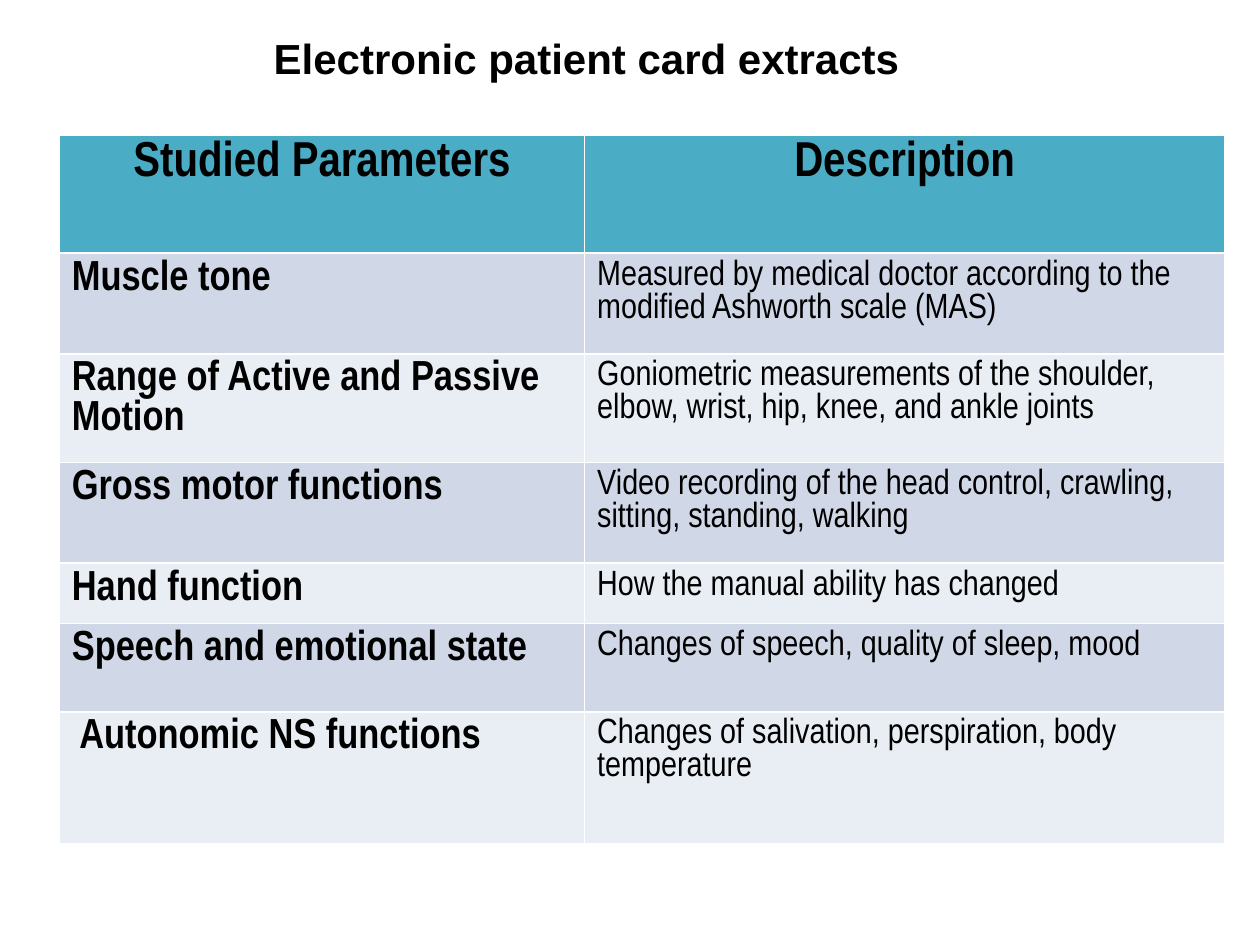
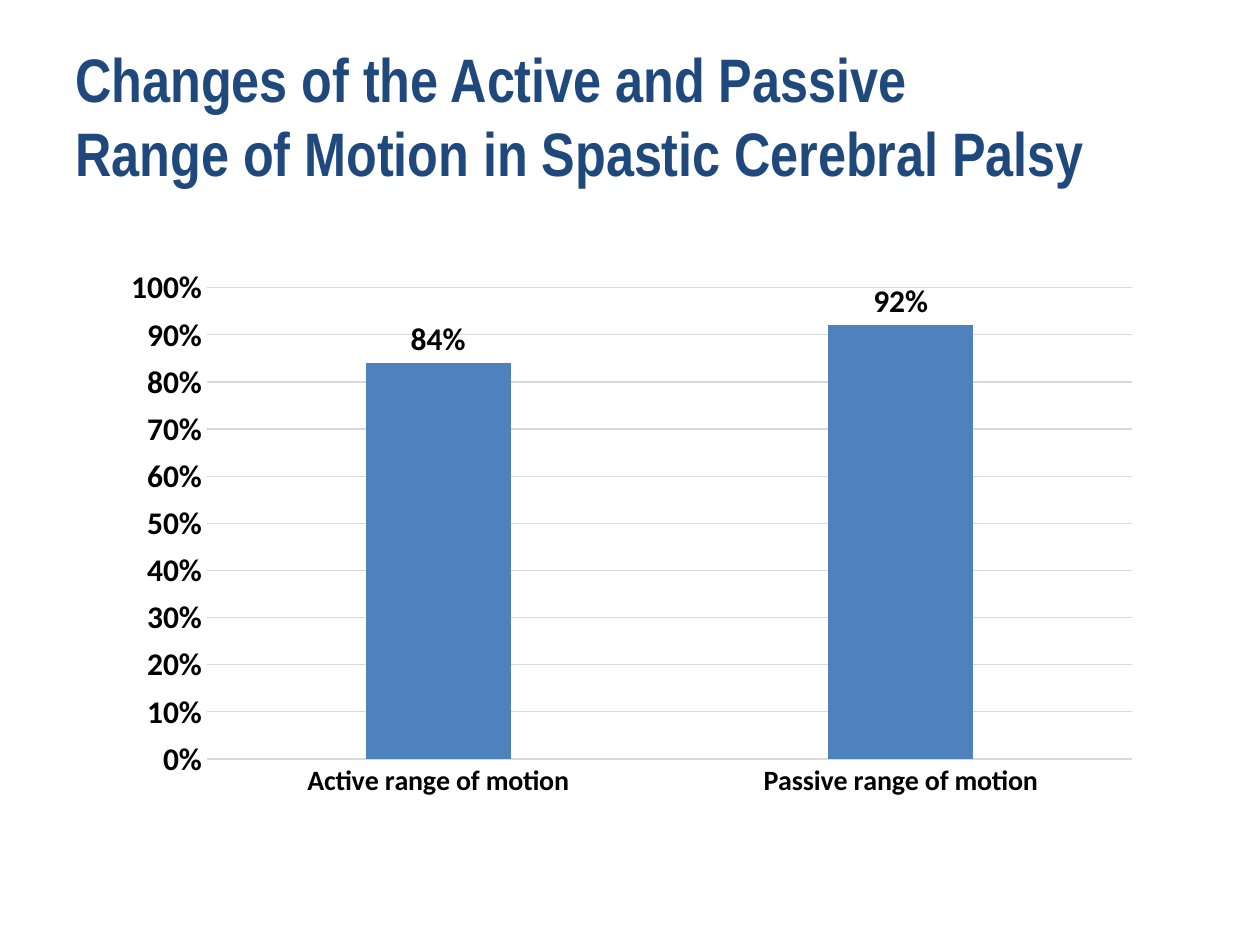
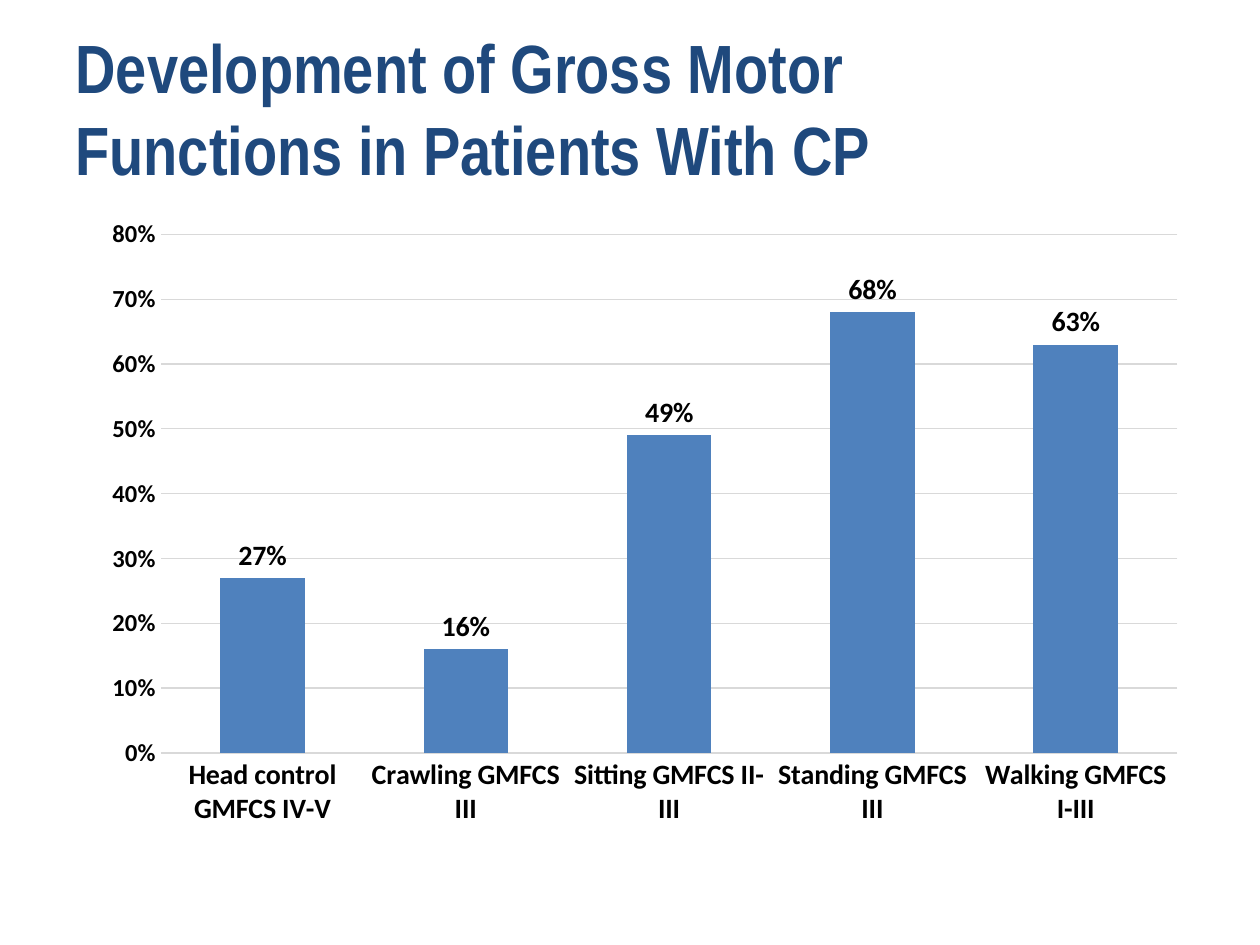
from lxml import etree
from pptx import Presentation
from pptx.chart.data import CategoryChartData
from pptx.dml.color import RGBColor
from pptx.enum.chart import XL_CHART_TYPE, XL_LABEL_POSITION, XL_TICK_MARK
from pptx.enum.text import MSO_ANCHOR, MSO_AUTO_SIZE, PP_ALIGN
from pptx.oxml.ns import qn
from pptx.util import Inches, Pt

COLUMNS = XL_CHART_TYPE.COLUMN_CLUSTERED
OUTSIDE_END = XL_LABEL_POSITION.OUTSIDE_END
NO_TICK = XL_TICK_MARK.NONE
MIDDLE, BOTTOM = MSO_ANCHOR.MIDDLE, MSO_ANCHOR.BOTTOM
NO_FIT = MSO_AUTO_SIZE.NONE
LEFT, CENTER = PP_ALIGN.LEFT, PP_ALIGN.CENTER

BLACK = RGBColor(0x00, 0x00, 0x00)
NAVY = RGBColor(0x1F, 0x49, 0x7D)
BLUE = RGBColor(0x4F, 0x81, 0xBD)
TEAL = RGBColor(0x4B, 0xAC, 0xC6)
BAND_DARK = RGBColor(0xD0, 0xD8, 0xE8)
BAND_LIGHT = RGBColor(0xE9, 0xED, 0xF4)
GRID = RGBColor(0xD9, 0xD9, 0xD9)

NARROW, SANS, CHART_FONT = "Arial Narrow", "Arial", "Calibri"
TITLE_ONLY = 5

PARAMETERS = [
    ("Studied Parameters", "Description", 0.94),
    ("Muscle tone",
     "Measured by medical doctor according to the modified Ashworth scale (MAS)", 0.8),
    ("Range of Active and Passive Motion",
     "Goniometric measurements of the shoulder, elbow, wrist, hip, knee, and ankle joints",
     0.86),
    ("Gross motor functions",
     "Video recording of the head control, crawling, sitting, standing, walking", 0.8),
    ("Hand function", "How the manual ability has changed", 0.48),
    ("Speech and emotional state", "Changes of speech, quality of sleep, mood", 0.7),
    ("Autonomic NS functions",
     "Changes of salivation, perspiration, body temperature", 1.05),
]
COLUMN_WIDTHS = (4.17, 5.08)

RANGE_OF_MOTION = {"Active range of motion": 0.84, "Passive range of motion": 0.92}
GROSS_MOTOR = {
    "Head control GMFCS IV-V": 0.27,
    "Crawling GMFCS III": 0.16,
    "Sitting GMFCS II-III": 0.49,
    "Standing GMFCS III": 0.68,
    "Walking GMFCS I-III": 0.63,
}


def set_font(font, name, size, color=BLACK, bold=True):
    font.name, font.size, font.bold = name, Pt(size), bold
    font.color.rgb = color


def add_titled_slide(prs, text, box, size, name=NARROW, color=NAVY,
                     align=LEFT, anchor=BOTTOM):
    """Add a title-only slide and format its title in the given box."""
    s = prs.slides.add_slide(prs.slide_layouts[TITLE_ONLY])
    title = s.shapes.title
    title.left, title.top, title.width, title.height = map(Inches, box)
    tf = title.text_frame
    tf.text = text
    tf.word_wrap, tf.auto_size, tf.vertical_anchor = True, NO_FIT, anchor
    p = tf.paragraphs[0]
    p.alignment = align
    set_font(p.font, name, size, color)
    return s


def fill_cell(cell, text, size, bold, align, color):
    cell.fill.solid()
    cell.fill.fore_color.rgb = color
    cell.text = text
    p = cell.text_frame.paragraphs[0]
    p.alignment = align
    set_font(p.font, NARROW, size, bold=bold)


def add_parameter_table(s, left, top):
    """Header row, then banded rows of parameter and description."""
    width, height = sum(COLUMN_WIDTHS), sum(row[-1] for row in PARAMETERS)
    table = s.shapes.add_table(len(PARAMETERS), len(COLUMN_WIDTHS), Inches(left),
                               Inches(top), Inches(width), Inches(height)).table
    for column, column_width in zip(table.columns, COLUMN_WIDTHS):
        column.width = Inches(column_width)
    for i, (parameter, description, row_height) in enumerate(PARAMETERS):
        table.rows[i].height = Inches(row_height)
        if i == 0:
            styles = [(28, True, CENTER, TEAL)] * 2
        else:
            band = BAND_DARK if i % 2 else BAND_LIGHT
            styles = [(24, True, LEFT, band), (20, False, LEFT, band)]
        for j, text in enumerate((parameter, description)):
            fill_cell(table.cell(i, j), text, *styles[j])
    # The last parameter is set in slightly
    table.cell(len(PARAMETERS) - 1, 0).margin_left = Inches(0.16)


def place_plot(chart, plot_box):
    """Fix the inner plot area, in fractions of the chart."""
    area = chart.element.find(".//" + qn("c:plotArea"))
    for old in area.findall(qn("c:layout")):
        area.remove(old)
    layout = etree.Element(qn("c:layout"))
    manual = etree.SubElement(layout, qn("c:manualLayout"))
    settings = [("layoutTarget", "inner"), ("xMode", "edge"), ("yMode", "edge")]
    for tag, value in settings + list(zip("xywh", plot_box)):
        etree.SubElement(manual, qn("c:" + tag)).set("val", str(value))
    area.insert(0, layout)


def add_percent_chart(s, box, plot_box, values, maximum, gap, axis_size, label_size):
    """Column chart of shares with value labels above the columns."""
    data = CategoryChartData(number_format="0%")
    data.categories = list(values)
    data.add_series("Series 1", list(values.values()))
    chart = s.shapes.add_chart(COLUMNS, *map(Inches, box), data).chart
    chart.has_legend = chart.has_title = False
    set_font(chart.font, CHART_FONT, label_size)
    place_plot(chart, plot_box)

    # Axes
    category_axis, value_axis = chart.category_axis, chart.value_axis
    for axis, size in ((category_axis, 16), (value_axis, axis_size)):
        axis.major_tick_mark = axis.minor_tick_mark = NO_TICK
        set_font(axis.tick_labels.font, CHART_FONT, size)
    value_axis.minimum_scale, value_axis.maximum_scale = 0, maximum
    value_axis.major_unit = 0.1
    value_axis.tick_labels.number_format = "0%"
    value_axis.tick_labels.number_format_is_linked = False
    value_axis.format.line.fill.background()
    for line in (category_axis.format.line, value_axis.major_gridlines.format.line):
        line.color.rgb, line.width = GRID, Pt(0.75)

    # Level category labels, so that long ones wrap
    for body in chart.element.xpath(".//c:catAx/c:txPr/a:bodyPr"):
        body.set("rot", "0")
        body.set("vert", "horz")

    # Columns and labels
    plot = chart.plots[0]
    plot.gap_width, plot.overlap, plot.vary_by_categories = gap, -27, False
    fill = plot.series[0].format.fill
    fill.solid()
    fill.fore_color.rgb = BLUE
    plot.has_data_labels = True
    labels = plot.data_labels
    labels.show_value, labels.position = True, OUTSIDE_END
    labels.number_format, labels.number_format_is_linked = "0%", False
    set_font(labels.font, CHART_FONT, label_size)


def main():
    prs = Presentation()
    prs.slide_width, prs.slide_height = Inches(10), Inches(7.5)

    # Patient card
    s = add_titled_slide(prs, "Electronic patient card extracts", (1.07, 0.21, 7.17, 0.5),
                         24, SANS, BLACK, CENTER, MIDDLE)
    add_parameter_table(s, 0.47, 1.07)

    # Range of motion
    s = add_titled_slide(
        prs, "Changes of the Active and Passive\vRange of Motion in Spastic Cerebral Palsy",
        (0.5, 0.28, 8.25, 1.27), 35.1)
    add_percent_chart(s, (0.9, 2.02, 8.25, 4.4), (0.09, 0.06, 0.89, 0.85),
                      RANGE_OF_MOTION, 1, 219, 18, 18)

    # Gross motor functions
    s = add_titled_slide(prs, "Development of Gross Motor Functions in Patients With CP",
                         (0.5, 0.13, 8.25, 1.42), 39)
    add_percent_chart(s, (0.75, 1.66, 8.77, 5.02), (0.06, 0.04, 0.92, 0.82),
                      GROSS_MOTOR, 0.8, 141, 14, 16)

    prs.save("out.pptx")


if __name__ == "__main__":
    main()
